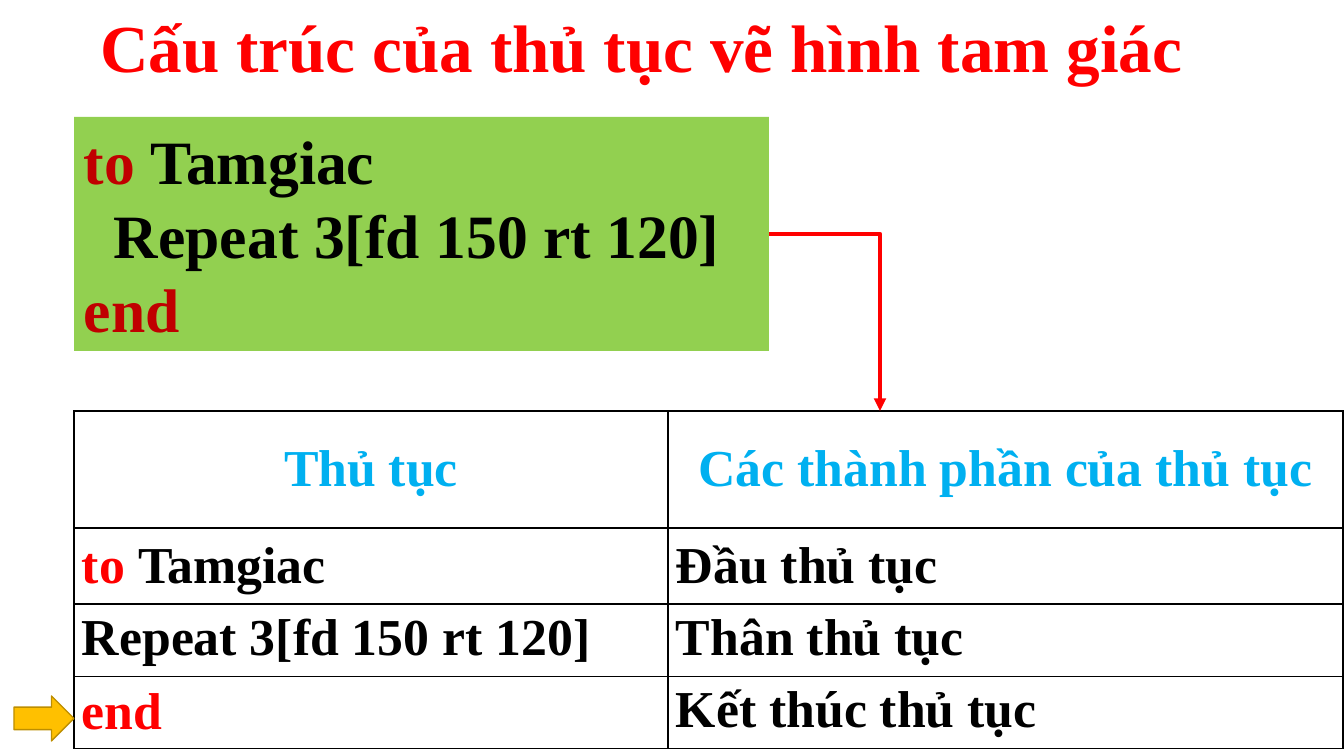
from lxml.etree import SubElement
from pptx import Presentation
from pptx.dml.color import RGBColor
from pptx.enum.shapes import MSO_CONNECTOR as Connector, MSO_SHAPE as Shape
from pptx.enum.text import MSO_ANCHOR as Anchor, PP_ALIGN as Align
from pptx.oxml import parse_xml
from pptx.oxml.ns import nsdecls, qn
from pptx.util import Emu, Pt

EMU_PER_PX = 914400 / 100.8
FONT = "Times New Roman"
RED, DARK_RED, BLACK, BLUE = "FF0000", "C00000", "000000", "00B0F0"


def px(length):
    return Emu(round(length * EMU_PER_PX))


def color(hex_string):
    return RGBColor.from_string(hex_string)


def write(paragraph, parts, size, align=Align.LEFT):
    paragraph.alignment = align
    paragraph.font.name = FONT
    paragraph.font.size = Pt(size)
    paragraph.font.bold = True
    for words, ink in parts:
        run = paragraph.add_run()
        run.text = words
        run.font.color.rgb = color(ink)


def add_title(slide, box):
    title = slide.shapes.add_textbox(*map(px, box))
    title.text_frame.word_wrap = True
    write(title.text_frame.paragraphs[0],
          [("Cấu trúc của thủ tục vẽ hình tam giác ", RED)], 48, Align.CENTER)


def add_block(slide, preset, box, fill):
    block = slide.shapes.add_shape(preset, *map(px, box))
    block.shadow.inherit = False
    block.fill.solid()
    block.fill.fore_color.rgb = color(fill)
    return block


def add_procedure(slide, box):
    procedure = add_block(slide, Shape.RECTANGLE, box, "92D050")
    procedure.line.fill.background()
    frame = procedure.text_frame
    frame.word_wrap = True
    code = [
        (0, [("to ", DARK_RED), ("Tamgiac", BLACK)]),
        (30, [("Repeat 3[fd 150 rt 120]", BLACK)]),
        (0, [("end", DARK_RED)]),
    ]
    for number, (indent, parts) in enumerate(code):
        line = frame.add_paragraph() if number else frame.paragraphs[0]
        write(line, parts, 44)
        line._p.get_or_add_pPr().set("marL", str(px(indent)))


def add_borders(cell):
    properties = cell._tc.get_or_add_tcPr()
    for position, side in enumerate(("lnL", "lnR", "lnT", "lnB")):
        properties.insert(position, parse_xml(
            f'<a:{side} {nsdecls("a")} w="12700"><a:solidFill>'
            f'<a:srgbClr val="{BLACK}"/></a:solidFill></a:{side}>'))


def add_parts_table(slide, box):
    rows = [
        [[("Thủ tục", BLUE)], [("Các thành phần của thủ tục", BLUE)]],
        [[("to ", RED), ("Tamgiac", BLACK)], [("Đầu thủ tục", BLACK)]],
        [[("Repeat 3[fd 150 rt 120]", BLACK)], [("Thân thủ tục", BLACK)]],
        [[("end", RED)], [("Kết thúc thủ tục", BLACK)]],
    ]
    top_anchored = {(2, 0), (2, 1), (3, 1)}
    table = slide.shapes.add_table(4, 2, *map(px, box)).table
    for column, width in zip(table.columns, (594, 675)):
        column.width = px(width)
    for row, height in zip(table.rows, (117, 76, 72, 72)):
        row.height = px(height)
    for r, row in enumerate(rows):
        for c, parts in enumerate(row):
            cell = table.cell(r, c)
            cell.fill.background()
            add_borders(cell)
            cell.margin_left = cell.margin_right = px(8)
            cell.margin_top = cell.margin_bottom = px(5)
            cell.vertical_anchor = Anchor.TOP if (r, c) in top_anchored else Anchor.MIDDLE
            write(cell.text_frame.paragraphs[0], parts, 37,
                  Align.LEFT if r else Align.CENTER)


def add_link(slide, start, end):
    link = slide.shapes.add_connector(Connector.ELBOW, *map(px, start + end))
    link.line.color.rgb = color(RED)
    link.line.width = Pt(3)
    properties = link._element.spPr
    properties.find(qn("a:prstGeom")).set("prst", "bentConnector2")
    SubElement(link.line._get_or_add_ln(), qn("a:tailEnd"), type="triangle")
    SubElement(properties, qn("a:effectLst"))


def add_pointer(slide, box):
    pointer = add_block(slide, Shape.RIGHT_ARROW, box, "FFC000")
    pointer.line.color.rgb = color("BD8E00")
    pointer.line.width = Pt(1)


def main():
    deck = Presentation()
    deck.slide_width, deck.slide_height = px(1344), px(756)
    slide = deck.slides.add_slide(deck.slide_layouts[6])
    add_title(slide, (14, 0, 1272, 92))
    add_procedure(slide, (74, 117, 695, 234))
    add_parts_table(slide, (74, 411, 1269, 337))
    add_link(slide, (769, 234), (880, 411))
    add_pointer(slide, (14, 696, 60, 45))
    deck.save("out.pptx")


if __name__ == "__main__":
    main()
